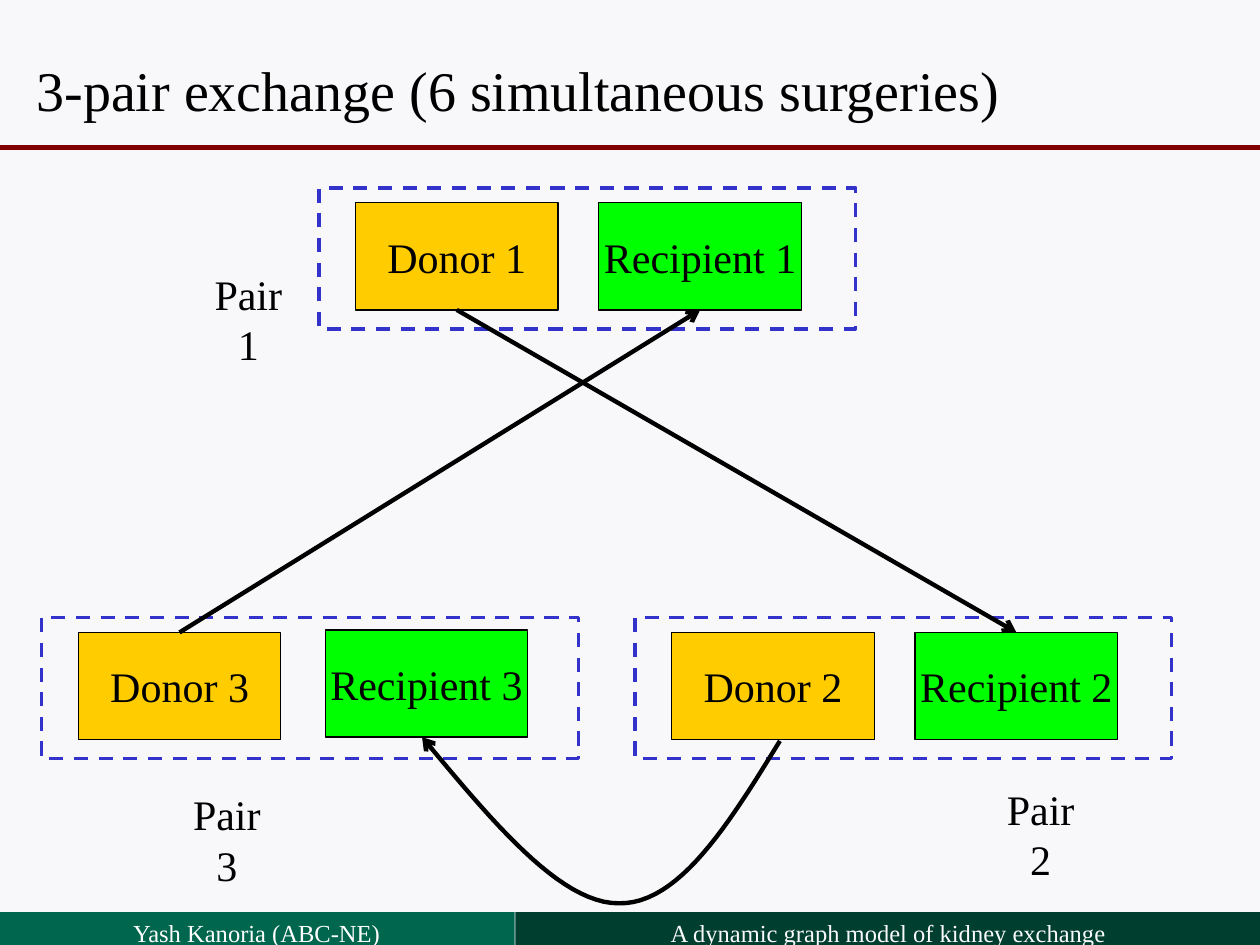
"""Build the slide showing a 3-pair kidney exchange."""
import pptx
import pptx.util
import pptx.dml.color
import pptx.enum.dml
import pptx.enum.shapes
import pptx.enum.text
from lxml import etree

Pt = pptx.util.Pt
RGB = pptx.dml.color.RGBColor
RECT = pptx.enum.shapes.MSO_SHAPE.RECTANGLE
STRAIGHT = pptx.enum.shapes.MSO_CONNECTOR.STRAIGHT
ALIGN = pptx.enum.text.PP_ALIGN
ANCHOR = pptx.enum.text.MSO_ANCHOR
BLACK, WHITE = RGB(0, 0, 0), RGB(255, 255, 255)
PAPER, OFF_WHITE = RGB(0xF8, 0xF8, 0xFA), RGB(0xFA, 0xFA, 0xFA)
GREEN, DARK_GREEN = RGB(0, 0x66, 0x4D), RGB(0, 0x3E, 0x2F)
MAROON, BLUE = RGB(0x80, 0, 0), RGB(0x33, 0x33, 0xCC)
GOLD, LIME = RGB(0xFF, 0xCC, 0), RGB(0, 0xFF, 0)
FONT = "Times New Roman"

TITLE = "3-pair exchange (6 simultaneous surgeries)"
FOOTERS = [
    ("Yash Kanoria (ABC-NE)", -0.7, 294.8, GREEN, WHITE),
    ("A dynamic graph model of kidney exchange", 294.5, 426.2, DARK_GREEN, OFF_WHITE),
]
PAIRS = {
    1: {"frame": (182.2, 107.3), "label": (106.6, 149.8), "recipient": (160, 8.6)},
    2: {"frame": (362.9, 352.8), "label": (559.4, 444.2), "recipient": (160, 8.6)},
    3: {"frame": (23.8, 352.8), "label": (94.3, 447.1), "recipient": (162, 7.2)},
}
DONOR = (20.9, 8.6)
FRAME_SIZE, BOX_SIZE, LABEL_SIZE = (306.7, 80.6), (115.8, 61.2), (70.6, 36)
STRAIGHT_GIFTS = [(1, 2, 2, 0), (3, 1, 0, 2)]
CURVES = [
    [(445.7, 423.4), (416.9, 470.2), (388.1, 517), (353.5, 516.2)],
    [(353.5, 516.2), (319.7, 516.2), (280.8, 468.7), (241.2, 421.2)],
]
STEPS = 24


def write(shape, text, size, color=BLACK, align=ALIGN.CENTER, anchor=ANCHOR.TOP, wrap=True):
    tf = shape.text_frame
    tf.word_wrap, tf.vertical_anchor = wrap, anchor
    p = tf.paragraphs[0]
    p.text, p.alignment = text, align
    p.font.name, p.font.size, p.font.color.rgb = FONT, Pt(size), color


def add_rect(s, left, top, width, height, fill=None, line=None, weight=0.75):
    sp = s.shapes.add_shape(RECT, Pt(left), Pt(top), Pt(width), Pt(height))
    sp.shadow.inherit = False
    if fill is None:
        sp.fill.background()
    else:
        sp.fill.solid()
        sp.fill.fore_color.rgb = fill
    if line is None:
        sp.line.fill.background()
    else:
        sp.line.color.rgb, sp.line.width = line, Pt(weight)
    return sp


def add_text(s, left, top, width, height, text, size, **style):
    sp = s.shapes.add_textbox(Pt(left), Pt(top), Pt(width), Pt(height))
    write(sp, text, size, **style)


def add_line(s, start, end, color, weight):
    sp = s.shapes.add_connector(STRAIGHT, *(Pt(v) for v in (*start, *end)))
    sp.line.color.rgb, sp.line.width = color, Pt(weight)
    etree.SubElement(sp._element.spPr, pptx.oxml.ns.qn("a:effectLst"))
    return sp


def add_head(sp):
    ln = sp.line._get_or_add_ln()
    etree.SubElement(ln, pptx.oxml.ns.qn("a:tailEnd"), type="arrow")


def bezier(points, t):
    weights = ((1 - t) ** 3, 3 * t * (1 - t) ** 2, 3 * t * t * (1 - t), t ** 3)
    return tuple(Pt(sum(w * pt[i] for w, pt in zip(weights, points))) for i in (0, 1))


def add_pair(s, number, pair):
    x, y = pair["frame"]
    boxes = []
    for role, (dx, dy), fill in (("Donor", DONOR, GOLD), ("Recipient", pair["recipient"], LIME)):
        sp = add_rect(s, x + dx, y + dy, *BOX_SIZE, fill, BLACK)
        write(sp, f"{role} {number}", 24, anchor=ANCHOR.MIDDLE, wrap=False)
        boxes.append(sp)
    frame = add_rect(s, x, y, *FRAME_SIZE, line=BLUE, weight=2)
    frame.line.dash_style = pptx.enum.dml.MSO_LINE.DASH
    add_text(s, *pair["label"], *LABEL_SIZE, f"Pair {number}", 24)
    return boxes


def main():
    prs = pptx.Presentation()
    prs.slide_width, prs.slide_height = Pt(720), Pt(540)
    s = prs.slides.add_slide(prs.slide_layouts[6])
    s.background.fill.solid()
    s.background.fill.fore_color.rgb = PAPER

    for text, left, width, fill, color in FOOTERS:
        write(add_rect(s, left, 521.3, width, 24.5, fill), text, 14, color)
    add_line(s, (0, 84.2), (720, 84.2), MAROON, 3)
    add_text(s, 13.7, 30.2, 610.6, 41.8, TITLE, 32, align=ALIGN.LEFT, anchor=ANCHOR.MIDDLE)

    boxes = {number: add_pair(s, number, pair) for number, pair in PAIRS.items()}
    for giver, taker, giver_site, taker_site in STRAIGHT_GIFTS:
        arrow = add_line(s, (0, 0), (0, 0), BLACK, 2.5)
        arrow.begin_connect(boxes[giver][0], giver_site)
        arrow.end_connect(boxes[taker][1], taker_site)
        add_head(arrow)

    points = [bezier(curve, i / STEPS) for curve in CURVES for i in range(1, STEPS + 1)]
    builder = s.shapes.build_freeform(*bezier(CURVES[0], 0))
    builder.add_line_segments(points, close=False)
    arc = builder.convert_to_shape()
    arc.shadow.inherit = False
    arc.fill.background()
    arc.line.color.rgb, arc.line.width = BLACK, Pt(2.5)
    add_head(arc)

    prs.save("out.pptx")


if __name__ == "__main__":
    main()
